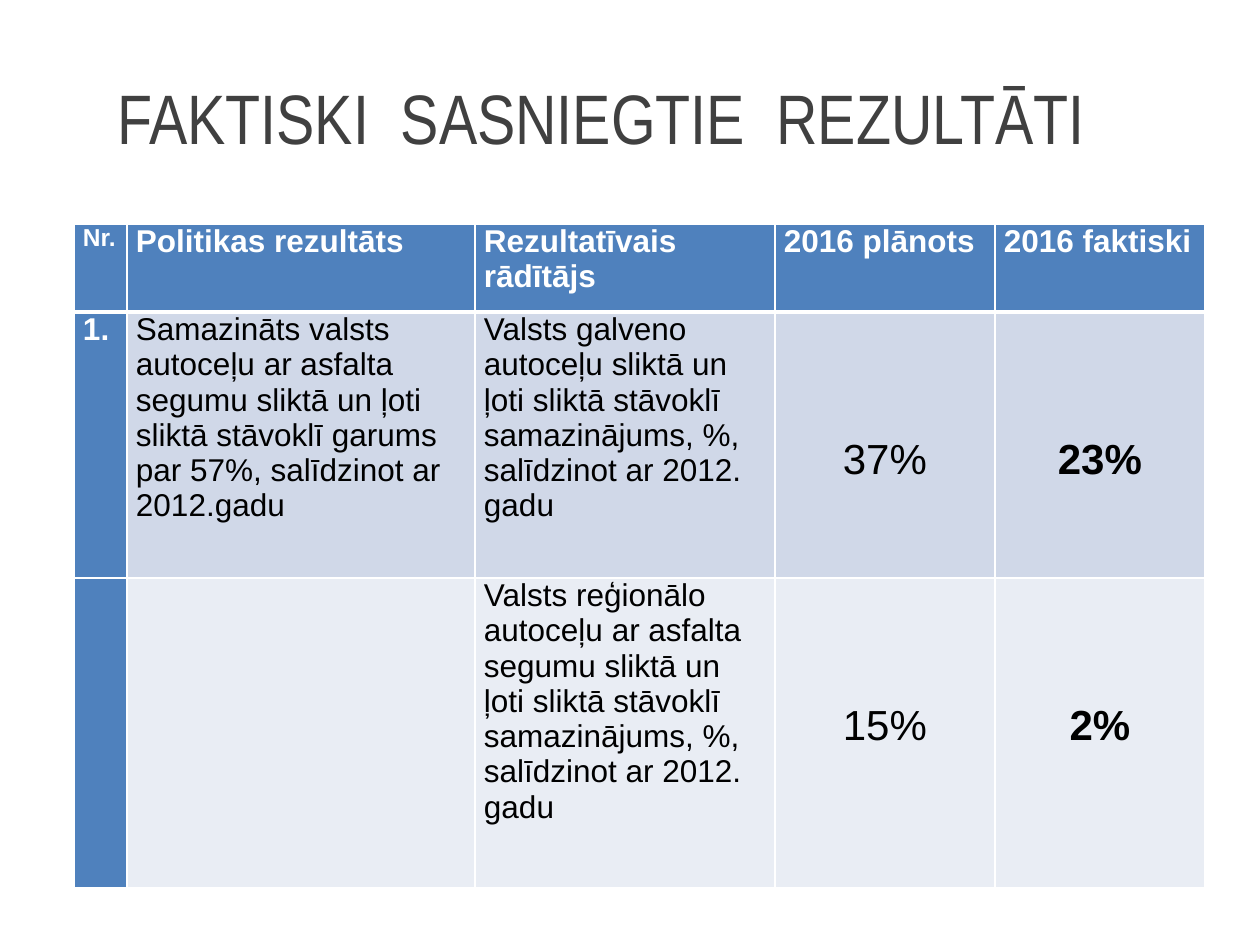
from dataclasses import dataclass

from lxml import etree
from pptx import Presentation
from pptx import util as u
from pptx.dml.color import RGBColor
from pptx.enum import text
from pptx.oxml.ns import qn

PX_PER_INCH = 126


def px(n):
    return u.Emu(round(n * 914400 / PX_PER_INCH))


@dataclass(frozen=True)
class Theme:
    title_font: str = "Arial Narrow"
    body_font: str = "Arial"
    title_size: int = 40
    value_size: int = 24
    body_size: int = 18
    small_size: int = 14
    title: str = "404040"
    ink: str = "000000"
    white: str = "FFFFFF"
    accent: str = "4F81BD"
    bands: tuple = ("D0D8E8", "E9EDF4")


class Deck:
    def __init__(self, theme, width, height):
        self.theme = theme
        self.prs = Presentation()
        self.prs.slide_width, self.prs.slide_height = px(width), px(height)
        self.slide = self.prs.slides.add_slide(self.prs.slide_layouts[6])

    def run(self, p, words, font, size, color, bold=False):
        r = p.add_run()
        r.text = words
        r.font.name, r.font.size, r.font.bold = font, u.Pt(size), bold
        r.font.color.rgb = RGBColor.from_string(color)

    def title(self, words, box):
        t = self.theme
        tf = self.slide.shapes.add_textbox(*map(px, box)).text_frame
        tf.word_wrap = True
        tf.vertical_anchor = text.MSO_ANCHOR.MIDDLE
        self.run(tf.paragraphs[0], words, t.title_font, t.title_size, t.title)

    def borders(self, cell, widths):
        # Border lines come before the fill in the cell properties
        tc_pr = cell._tc.get_or_add_tcPr()
        for i, (side, width) in enumerate(widths.items()):
            ln = etree.Element(qn(f"a:ln{side}"), w=str(u.Pt(width)))
            fill = etree.SubElement(ln, qn("a:solidFill"))
            etree.SubElement(fill, qn("a:srgbClr"), val=self.theme.white)
            tc_pr.insert(i, ln)

    def cell(self, cell, words, row, col):
        t = self.theme
        header, label, value = row == 0, col == 0, row > 0 and col >= 3
        strong = header or label

        cell.fill.solid()
        color = t.accent if strong else t.bands[(row - 1) % 2]
        cell.fill.fore_color.rgb = RGBColor.from_string(color)
        self.borders(cell, {"L": 1, "R": 1, "T": 3 if row == 1 else 1,
                            "B": 3 if header else 1})
        cell.margin_left = cell.margin_right = px(9)
        cell.margin_top = px(125 if value else 0)
        cell.margin_bottom = 0
        if not words:
            return

        p = cell.text_frame.paragraphs[0]
        p.space_after = u.Pt(6)
        if value:
            p.alignment = text.PP_ALIGN.CENTER
        size = (t.small_size if header and label
                else t.value_size if value else t.body_size)
        self.run(p, words, t.body_font, size, t.white if strong else t.ink,
                 bold=strong or col == 4)

    def table(self, rows, left, top, widths, heights):
        table = self.slide.shapes.add_table(
            len(heights), len(widths), px(left), px(top),
            px(sum(widths)), px(sum(heights))).table
        table.first_col = True
        for column, width in zip(table.columns, widths):
            column.width = px(width)
        for row, height in zip(table.rows, heights):
            row.height = px(height)
        for i, row in enumerate(rows):
            for j, words in enumerate(row):
                self.cell(table.cell(i, j), words, i, j)


RESULTS = [
    ["Nr.", "Politikas rezultāts", "Rezultatīvais rādītājs",
     "2016 plānots", "2016 faktiski"],
    ["1.",
     "Samazināts valsts autoceļu ar asfalta segumu sliktā un ļoti sliktā "
     "stāvoklī garums par 57%, salīdzinot ar 2012.gadu",
     "Valsts galveno autoceļu sliktā un ļoti sliktā stāvoklī "
     "samazinājums, %, salīdzinot ar 2012. gadu",
     "37%", "23%"],
    ["", "",
     "Valsts reģionālo autoceļu ar asfalta segumu sliktā un ļoti sliktā "
     "stāvoklī samazinājums, %, salīdzinot ar 2012. gadu",
     "15%", "2%"],
]


def main():
    deck = Deck(Theme(), 1260, 945)
    # Heading
    deck.title("FAKTISKI  SASNIEGTIE  REZULTĀTI", (105, 38, 1112, 158))
    # Planned and actual results
    deck.table(RESULTS, 74, 224, widths=[53, 348, 300, 220, 210],
               heights=[88, 266, 310])
    deck.prs.save("out.pptx")


if __name__ == "__main__":
    main()
